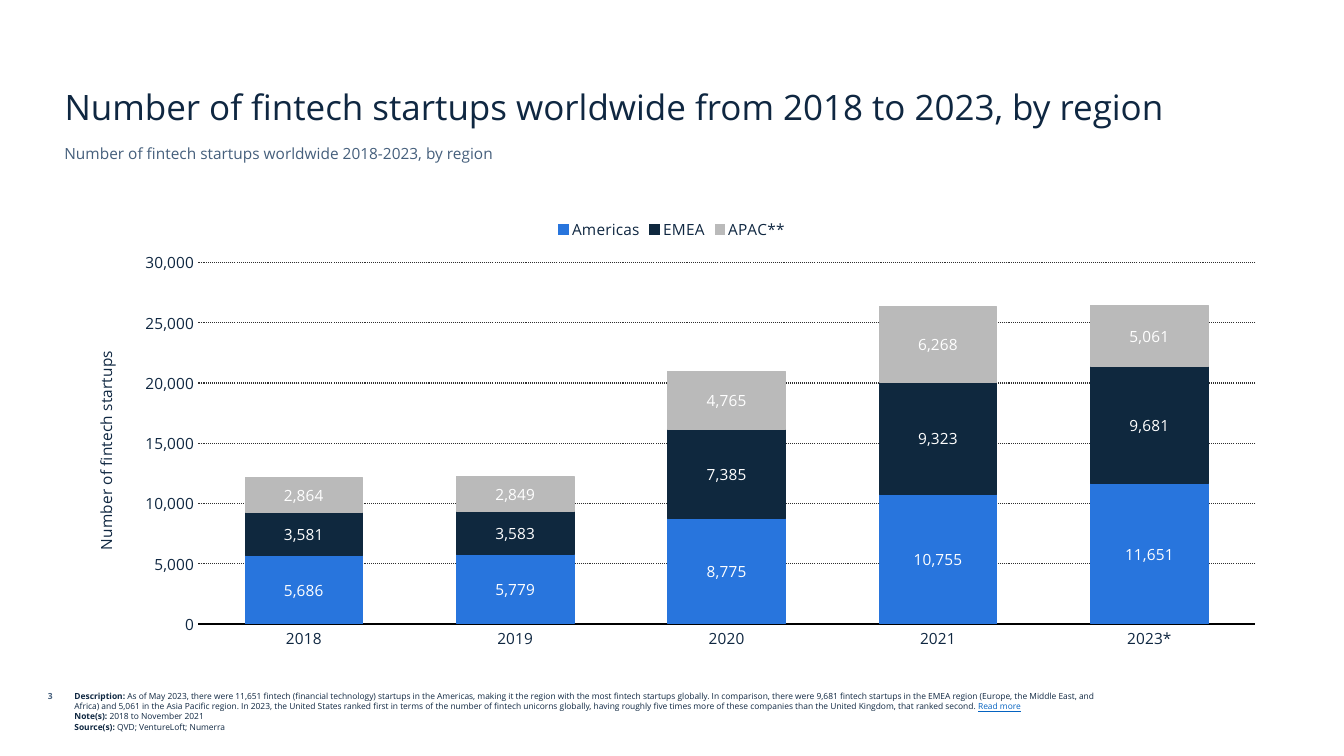
from dataclasses import dataclass

from lxml.etree import SubElement
from pptx import Presentation
from pptx.chart.data import CategoryChartData
from pptx.dml.color import RGBColor
from pptx.enum.chart import XL_CHART_TYPE, XL_LEGEND_POSITION, XL_TICK_MARK
from pptx.enum.dml import MSO_LINE
from pptx.enum.text import MSO_ANCHOR, MSO_AUTO_SIZE, PP_ALIGN
from pptx.oxml.ns import qn
from pptx.util import Inches, Pt


@dataclass(frozen=True)
class Theme:
    """Hold the colours, the font and the type sizes."""
    face: str = "Open Sans"
    ink: str = "0F2741"
    soft: str = "455F7C"
    link: str = "0563C1"
    blue: str = "2875DD"
    navy: str = "0F283E"
    grey: str = "BABABA"
    grid: str = "2F2F2F"
    black: str = "000000"
    white: str = "FFFFFF"
    head: int = 25
    body: int = 11
    note: int = 6


THEME = Theme()
YEARS = ["2018", "2019", "2020", "2021", "2023*"]
REGIONS = [
    ("Americas", [5686, 5779, 8775, 10755, 11651], THEME.blue),
    ("EMEA", [3581, 3583, 7385, 9323, 9681], THEME.navy),
    ("APAC**", [2864, 2849, 4765, 6268, 5061], THEME.grey),
]
ABOUT = (
    "As of May 2023, there were 11,651 fintech (financial technology) startups "
    "in the Americas, making it the region with the most fintech startups "
    "globally. In comparison, there were 9,681 fintech startups in the EMEA "
    "region (Europe, the Middle East, and Africa) and 5,061 in the Asia Pacific "
    "region. In 2023, the United States ranked first in terms of the number of "
    "fintech unicorns globally, having roughly five times more of these "
    "companies than the United Kingdom, that ranked second. "
)


def style(font, size, color, bold=False):
    """Set the face, size, colour and weight of a font."""
    font.name = THEME.face
    font.size = Pt(size)
    font.bold = bold
    font.color.rgb = RGBColor.from_string(color)


def add_run(para, text, size, color, bold=False):
    """Add one styled run to a paragraph and return it."""
    run = para.add_run()
    run.text = text
    style(run.font, size, color, bold)
    return run


def add_box(slide, left, top, width, height):
    """Add a wrapping text box and return its text frame."""
    box = slide.shapes.add_textbox(
        Inches(left), Inches(top), Inches(width), Inches(height))
    box.text_frame.word_wrap = True
    return box.text_frame


def add_title(slide, text):
    """Move and fill the title placeholder."""
    title = slide.shapes.title
    title.left, title.top = Inches(0.54), Inches(0.46)
    title.width, title.height = Inches(12.24), Inches(0.86)
    frame = title.text_frame
    frame.auto_size = MSO_AUTO_SIZE.NONE
    frame.vertical_anchor = MSO_ANCHOR.BOTTOM
    para = frame.paragraphs[0]
    para.alignment = PP_ALIGN.LEFT
    add_run(para, text, THEME.head, THEME.ink)


def add_line(slide, text, place, color, bold=False, align=PP_ALIGN.LEFT):
    """Add a text box that holds a single line."""
    para = add_box(slide, *place).paragraphs[0]
    para.alignment = align
    size = THEME.note if bold else THEME.body
    add_run(para, text, size, color, bold)


def add_notes(slide):
    """Add the description, note and source below the chart."""
    frame = add_box(slide, 0.64, 6.81, 10.47, 0.58)
    rows = [
        ("Description: ", ABOUT),
        ("Note(s): ", "2018 to November 2021"),
        ("Source(s): ", "QVD; VentureLoft; Numerra"),
    ]
    for index, (label, text) in enumerate(rows):
        para = frame.add_paragraph() if index else frame.paragraphs[0]
        add_run(para, label, THEME.note, THEME.ink, True)
        add_run(para, text, THEME.note, THEME.ink)
    more = add_run(frame.paragraphs[0], "Read more", THEME.note, THEME.link)
    more.font.underline = True


def set_plot(chart, **sides):
    """Fix the inner plot area as shares of the chart."""
    area = chart.element.find(".//" + qn("c:plotArea"))
    layout = area.find(qn("c:layout"))
    if layout is None:
        layout = SubElement(area, qn("c:layout"))
        area.insert(0, layout)
    manual = SubElement(layout, qn("c:manualLayout"))
    SubElement(manual, qn("c:layoutTarget")).set("val", "inner")
    for side in "xy":
        SubElement(manual, qn(f"c:{side}Mode")).set("val", "edge")
    for side, share in sides.items():
        SubElement(manual, qn(f"c:{side}")).set("val", str(share))


def set_axes(chart):
    """Format both axes, the grid and the axis title."""
    for axis in (chart.category_axis, chart.value_axis):
        axis.major_tick_mark = axis.minor_tick_mark = XL_TICK_MARK.NONE
        style(axis.tick_labels.font, THEME.body, THEME.ink)
    base = chart.category_axis.format.line
    base.color.rgb = RGBColor.from_string(THEME.black)
    base.width = Pt(2)

    value = chart.value_axis
    value.minimum_scale, value.maximum_scale = 0, 30000
    value.major_unit = 5000
    value.tick_labels.number_format = "#,##0"
    value.tick_labels.number_format_is_linked = False
    value.format.line.fill.background()
    grid = value.major_gridlines.format.line
    grid.color.rgb = RGBColor.from_string(THEME.grid)
    grid.width = Pt(0.75)
    grid.dash_style = MSO_LINE.ROUND_DOT

    para = value.axis_title.text_frame.paragraphs[0]
    add_run(para, "Number of fintech startups", THEME.body, THEME.ink)
    body = chart.element.find(".//" + qn("c:valAx")).find(
        ".//" + qn("c:title") + "//" + qn("a:bodyPr"))
    body.set("rot", "-5400000")
    body.set("vert", "horz")


def add_bars(slide):
    """Add the stacked columns of startups by region."""
    data = CategoryChartData(number_format="#,##0")
    data.categories = YEARS
    for name, counts, _ in REGIONS:
        data.add_series(name, counts)
    chart = slide.shapes.add_chart(
        XL_CHART_TYPE.COLUMN_STACKED, Inches(0.64), Inches(2.06),
        Inches(12.05), Inches(4.54), data).chart
    style(chart.font, THEME.body, THEME.ink)
    chart.has_title = False
    chart.has_legend = True
    chart.legend.position = XL_LEGEND_POSITION.TOP
    chart.legend.include_in_layout = False
    style(chart.legend.font, THEME.body, THEME.ink)
    set_plot(chart, x=0.11, y=0.12, w=0.87, h=0.79)
    set_axes(chart)

    plot = chart.plots[0]
    plot.gap_width, plot.overlap = 80, 100
    plot.vary_by_categories = False
    for series, (_, _, color) in zip(plot.series, REGIONS):
        tone = RGBColor.from_string(color)
        series.format.fill.solid()
        series.format.fill.fore_color.rgb = tone
        series.format.line.color.rgb = tone
        series.format.line.width = Pt(0.75)
        labels = series.data_labels
        labels.show_value = True
        style(labels.font, THEME.body, THEME.white)


def main():
    """Build the slide and save it."""
    deck = Presentation()
    deck.slide_width, deck.slide_height = Inches(13.33), Inches(7.5)
    slide = deck.slides.add_slide(deck.slide_layouts.get_by_name("Title Only"))
    add_title(
        slide, "Number of fintech startups worldwide from 2018 to 2023, by region")
    add_line(slide, "Number of fintech startups worldwide 2018-2023, by region",
             (0.54, 1.38, 12.24, 0.34), THEME.soft)
    add_bars(slide)
    add_line(slide, "3", (0, 6.81, 0.62, 0.3), THEME.soft, True, PP_ALIGN.RIGHT)
    add_notes(slide)
    deck.save("out.pptx")


if __name__ == "__main__":
    main()
